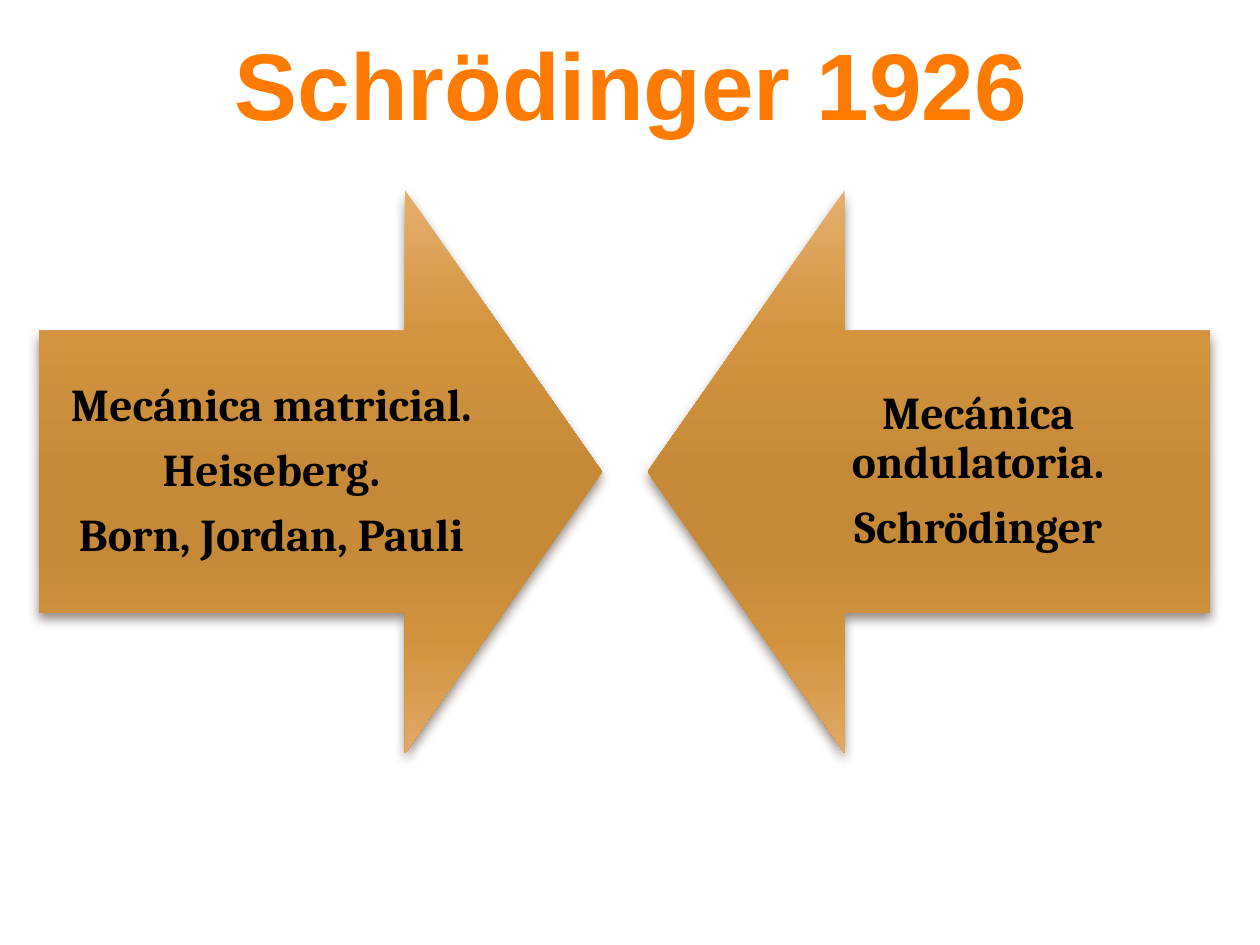
from typing import NamedTuple

from lxml import etree
from pptx import Presentation
from pptx import util as u
from pptx.dml.color import RGBColor
from pptx.enum import shapes, text
from pptx.oxml import ns

SIDE, TOP = 321.8, 108.7
WIDE, TALL = 265.7, 161.3
STOPS = [(0, "E6AF6E"), (25, "D4943F"), (50, "C58938"),
         (65, "C58938"), (80, "D3933E"), (100, "E1A966")]


class Arrow(NamedTuple):
    kind: shapes.MSO_SHAPE
    left: float
    inset: float
    lines: list[str]


ARROWS = [
    Arrow(shapes.MSO_SHAPE.RIGHT_ARROW, 22.3, 0,
          ["Mecánica matricial.", "Heiseberg.", "Born, Jordan, Pauli"]),
    Arrow(shapes.MSO_SHAPE.LEFT_ARROW, 370.1, SIDE - WIDE,
          ["Mecánica ondulatoria.", "Schrödinger"]),
]


def tint(hue: str) -> RGBColor:
    return RGBColor.from_string(hue)


def add_node(root, tag: str, **attrs):
    node = etree.SubElement(root, ns.qn(tag))
    for name, value in attrs.items():
        node.set(name, str(value))
    return node


def add_hue(root, hue: str):
    return add_node(root, "a:srgbClr", val=tint(hue))


def style(para, font: str, size: float, hue: str) -> None:
    para.alignment = text.PP_ALIGN.CENTER
    for run in para.runs:
        run.font.name, run.font.size, run.font.bold = font, u.Pt(size), True
        run.font.color.rgb = tint(hue)


def shade(shape) -> None:
    shape.fill.gradient()
    shape.fill.gradient_angle = 270
    stops = shape.element.spPr.find(".//" + ns.qn("a:gsLst"))
    for stop in list(stops):
        stops.remove(stop)
    for pos, hue in STOPS:
        add_hue(add_node(stops, "a:gs", pos=pos * 1000), hue)
    shape.line.fill.background()
    shape.shadow.inherit = False
    glow = add_node(shape.element.spPr.find(ns.qn("a:effectLst")), "a:outerShdw",
                    blurRad=u.Pt(6), dist=u.Pt(4), dir=90 * 60000, rotWithShape=0)
    add_node(add_hue(glow, "4E3B30"), "a:alpha", val=60000)


def draw_arrow(slide, arrow: Arrow) -> None:
    shape = slide.shapes.add_shape(
        arrow.kind, u.Pt(arrow.left), u.Pt(TOP), u.Pt(SIDE), u.Pt(SIDE))
    shape.adjustments[0], shape.adjustments[1] = 0.5, 0.35
    shade(shape)
    box = slide.shapes.add_textbox(
        u.Pt(arrow.left + arrow.inset), u.Pt(TOP + (SIDE - TALL) / 2),
        u.Pt(WIDE), u.Pt(TALL))
    frame = box.text_frame
    frame.word_wrap = True
    frame.vertical_anchor = text.MSO_ANCHOR.MIDDLE
    frame.margin_left = frame.margin_right = u.Pt(14.4)
    frame.margin_top = frame.margin_bottom = u.Pt(14.4)
    frame.text = "\n".join(arrow.lines)
    for para in frame.paragraphs:
        para.line_spacing, para.space_after = 0.9, u.Pt(9.1)
        style(para, "Cambria", 26, "000000")


def draw_title(slide, words: str) -> None:
    box = slide.shapes.add_textbox(u.Pt(124.6), u.Pt(11.5), u.Pt(472.3), u.Pt(72.7))
    frame = box.text_frame
    frame.word_wrap = False
    frame.auto_size = text.MSO_AUTO_SIZE.SHAPE_TO_FIT_TEXT
    frame.text = words
    style(frame.paragraphs[0], "Arial", 54, "FF7A00")


def main() -> None:
    """Build the slide with two facing arrows under a title."""
    deck = Presentation()
    deck.slide_width, deck.slide_height = u.Pt(720), u.Pt(540)
    slide = deck.slides.add_slide(deck.slide_layouts[6])
    for arrow in ARROWS:
        draw_arrow(slide, arrow)
    draw_title(slide, "Schrödinger 1926")
    deck.save("out.pptx")


if __name__ == "__main__":
    main()
